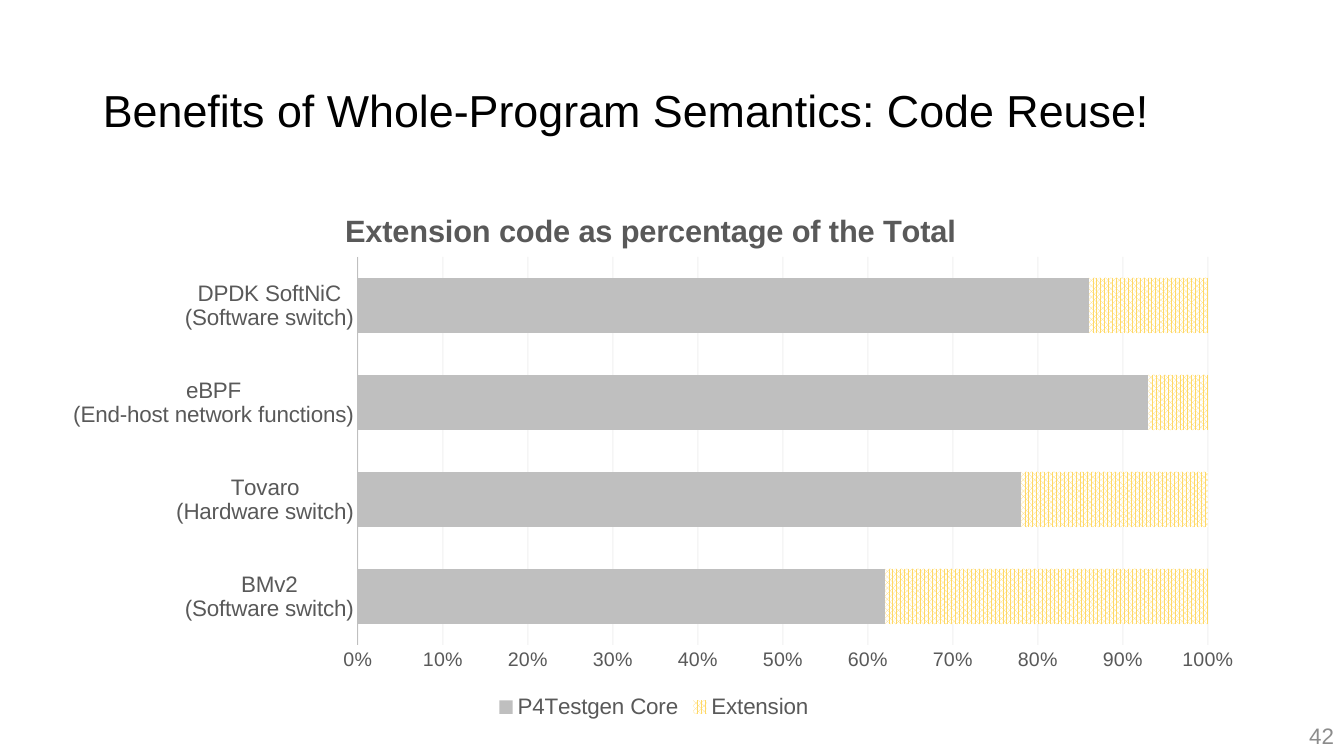
from lxml import etree
from pptx import Presentation
from pptx.chart.data import CategoryChartData
from pptx.dml.color import RGBColor
from pptx.enum import chart as ch, dml, text
from pptx.oxml import ns
from pptx.util import Inches, Pt

FONT = "Arial"
BLACK = RGBColor(0x00, 0x00, 0x00)
WHITE = RGBColor(0xFF, 0xFF, 0xFF)
LABEL_GREY = RGBColor(0x59, 0x59, 0x59)
NUMBER_GREY = RGBColor(0x8C, 0x8C, 0x8C)
CORE_GREY = RGBColor(0xBF, 0xBF, 0xBF)
GRID_GREY = RGBColor(0xD9, 0xD9, 0xD9)
EXTENSION_YELLOW = RGBColor(0xFF, 0xD9, 0x66)

# target, percentage of core code
CORE_SHARES = [
    ("BMv2\n(Software switch)", 62),
    ("Tovaro\n(Hardware switch)", 78),
    ("eBPF\n(End-host network functions)", 93),
    ("DPDK SoftNiC\n(Software switch)", 86),
]


def style_font(font, size, color, bold=False):
    font.name, font.size, font.bold = FONT, Pt(size), bold
    font.color.rgb = color


def add_run(p, words, size, color, bold=False):
    r = p.add_run()
    r.text = words
    style_font(r.font, size, color, bold)
    return r


def place(sp, box):
    sp.left, sp.top, sp.width, sp.height = (Inches(v) for v in box)


def add_title(s, box, words):
    sp = s.shapes.title
    place(sp, box)
    tf = sp.text_frame
    tf.word_wrap = True
    tf.vertical_anchor = text.MSO_ANCHOR.MIDDLE
    p = tf.paragraphs[0]
    p.alignment = text.PP_ALIGN.LEFT
    p.line_spacing = 0.9
    add_run(p, words, 32, BLACK)


def add_slide_number(s, box, number):
    tf = s.shapes.add_textbox(*(Inches(v) for v in box)).text_frame
    tf.word_wrap = True
    tf.vertical_anchor = text.MSO_ANCHOR.MIDDLE
    p = tf.paragraphs[0]
    p.alignment = text.PP_ALIGN.RIGHT
    add_run(p, number, 16, NUMBER_GREY)


def set_layout(parent, index, **values):
    """Give a chart part a manual layout, as fractions of the chart."""
    for old in parent.findall(ns.qn("c:layout")):
        parent.remove(old)
    layout = etree.Element(ns.qn("c:layout"))
    manual = etree.SubElement(layout, ns.qn("c:manualLayout"))
    for name, value in values.items():
        etree.SubElement(manual, ns.qn(f"c:{name}")).set("val", str(value))
    parent.insert(index, layout)


def add_chart_title(chart, words, x, y):
    title = chart.chart_title
    r = add_run(title.text_frame.paragraphs[0], words, 22, LABEL_GREY, True)
    r.font.element.set("spc", "40") if hasattr(r.font, "element") else None
    title.include_in_layout = False
    set_layout(title.element, 1, xMode="edge", yMode="edge", x=x, y=y)


def style_axes(chart):
    cat, val = chart.category_axis, chart.value_axis
    for axis, size in ((cat, 16), (val, 14)):
        axis.major_tick_mark = axis.minor_tick_mark = ch.XL_TICK_MARK.NONE
        style_font(axis.tick_labels.font, size, LABEL_GREY)
    cat.format.line.color.rgb = CORE_GREY
    cat.format.line.width = Pt(0.75)
    val.format.line.fill.background()
    val.tick_labels.number_format = "0%"
    val.tick_labels.number_format_is_linked = False
    val.has_major_gridlines = True
    grid = val.major_gridlines.format.line
    grid.color.rgb = GRID_GREY
    grid.width = Pt(0.75)
    for color in chart.element.xpath(".//c:majorGridlines//a:srgbClr"):
        etree.SubElement(color, ns.qn("a:alpha")).set("val", "40000")


def add_share_chart(s, box):
    left, top, width, height = box
    data = CategoryChartData()
    data.categories = [name for name, _ in CORE_SHARES]
    data.add_series("P4Testgen Core", [core for _, core in CORE_SHARES])
    data.add_series("Extension", [100 - core for _, core in CORE_SHARES])
    chart = s.shapes.add_chart(ch.XL_CHART_TYPE.BAR_STACKED_100,
                               *(Inches(v) for v in box), data).chart
    style_font(chart.font, 10, BLACK)
    add_chart_title(chart, "Extension code as percentage of the Total",
                    round(2.82 / width, 2), round(0.25 / height, 2))
    style_axes(chart)

    plot = chart.plots[0]
    plot.gap_width, plot.overlap = 75, 100
    plot.vary_by_categories = False
    core, extension = plot.series
    core.format.fill.solid()
    core.format.fill.fore_color.rgb = CORE_GREY
    fill = extension.format.fill
    fill.patterned()
    fill.pattern = dml.MSO_PATTERN.PERCENT_75
    fill.fore_color.rgb, fill.back_color.rgb = EXTENSION_YELLOW, WHITE

    chart.has_legend = True
    chart.legend.position = ch.XL_LEGEND_POSITION.BOTTOM
    chart.legend.include_in_layout = False
    style_font(chart.legend.font, 16, LABEL_GREY)
    set_layout(chart.element.xpath(".//c:plotArea")[0], 0,
               layoutTarget="inner", xMode="edge", yMode="edge",
               x=3.06 / width, y=0.78 / height,
               w=8.43 / width, h=3.85 / height)


def main():
    prs = Presentation()
    prs.slide_width, prs.slide_height = Inches(13.33), Inches(7.5)
    s = prs.slides.add_slide(prs.slide_layouts[5])
    add_title(s, (0.92, 0.4, 11.5, 1.45),
              "Benefits of Whole-Program Semantics: Code Reuse!")
    add_slide_number(s, (10.33, 7.1, 3, 0.4), "42")
    add_share_chart(s, (0.49, 1.77, 11.99, 5.41))
    prs.save("out.pptx")


if __name__ == "__main__":
    main()
